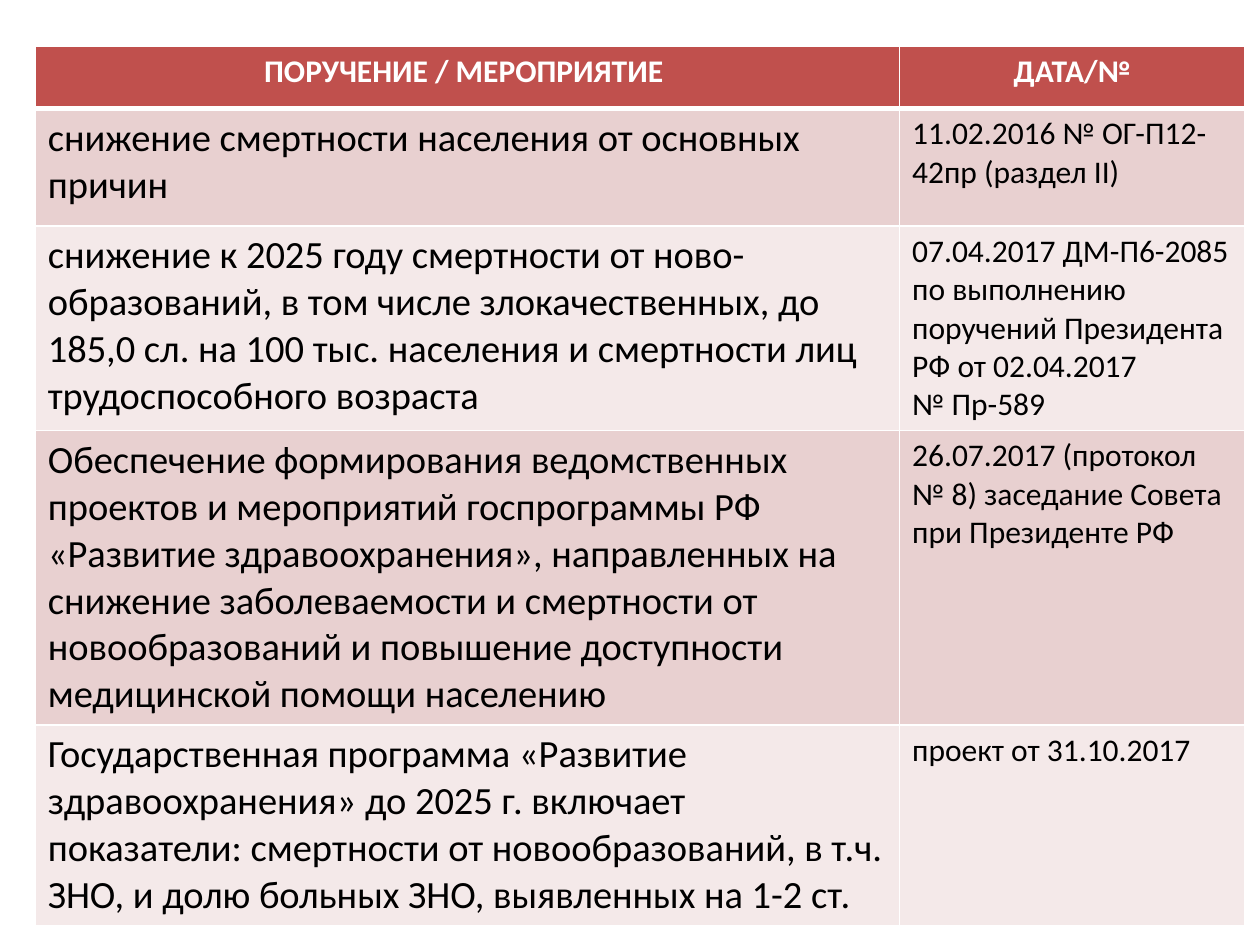
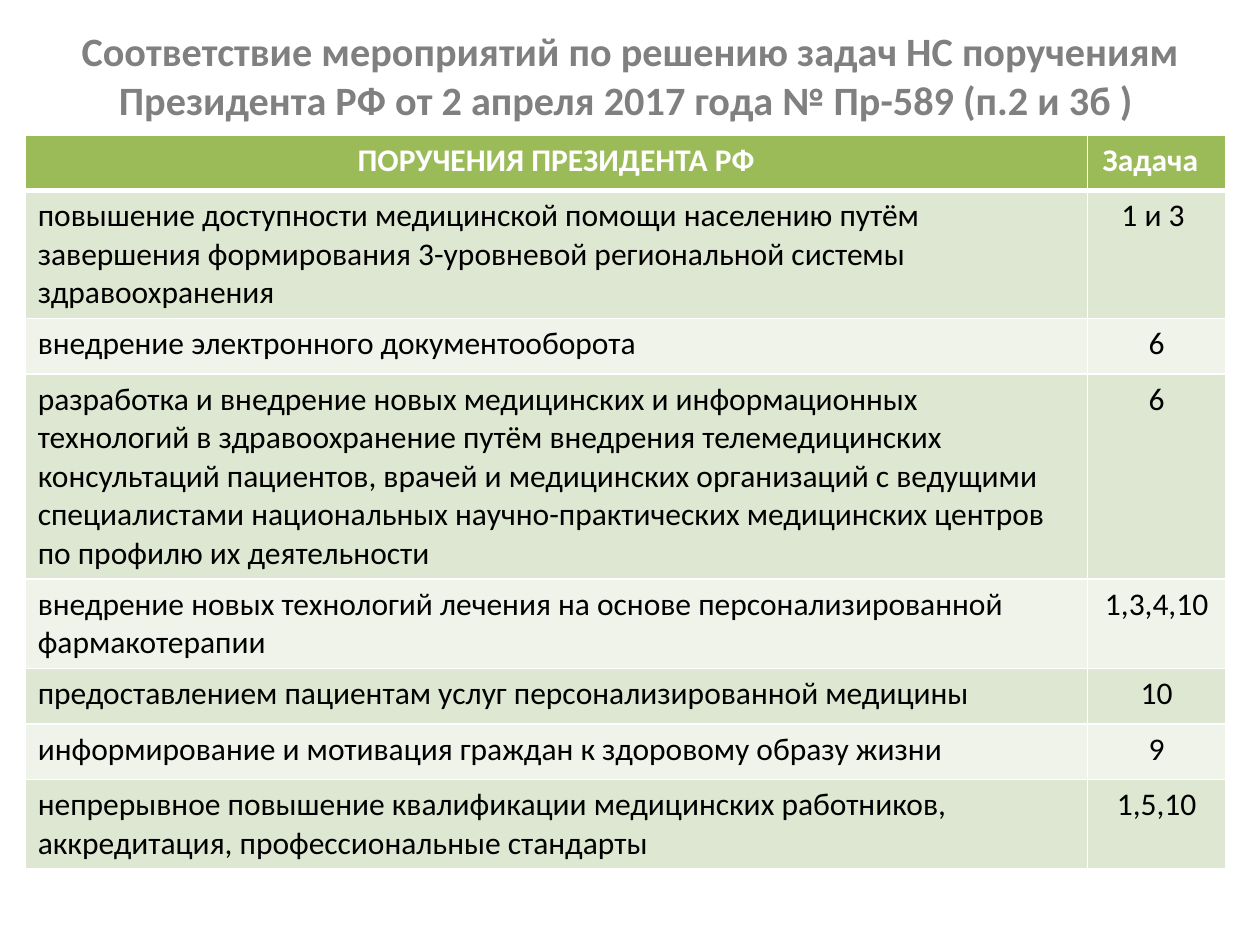
from dataclasses import dataclass

from lxml.etree import SubElement
from pptx import Presentation
from pptx.dml.color import RGBColor as Color
from pptx.enum.text import MSO_ANCHOR as Anchor, MSO_AUTO_SIZE as AutoSize, PP_ALIGN as Align
from pptx.oxml.ns import qn
from pptx.util import Emu, Inches, Pt

WIDTH, HEIGHT = Inches(10), Inches(7.5)
TITLE_ONLY, BLANK = 5, 6


@dataclass(frozen=True)
class Theme:
    font: str = "Calibri"
    white: str = "FFFFFF"
    black: str = "000000"
    grey: str = "808080"
    red: tuple = ("C0504D", "E8D0D0", "F4E9E9")
    green: tuple = ("9BBB59", "DEE7D1", "EFF3EA")
    title: int = 23
    large: int = 22
    normal: int = 18
    line: float = 1.22
    thin: int = 1
    thick: int = 3


@dataclass(frozen=True)
class Column:
    heading: str
    share: float
    size: int
    align: Align = Align.LEFT
    heading_margin: float = 0.1


THEME = Theme()

ORDER_COLUMNS = (
    Column("ПОРУЧЕНИЕ / МЕРОПРИЯТИЕ ", 68.6, THEME.large),
    Column("ДАТА/№", 27.4, THEME.normal),
)
ORDERS = [
    (2, "снижение смертности населения от основных причин",
     "11.02.2016 № ОГ-П12-42пр (раздел II)"),
    (4, "снижение к 2025 году смертности от ново-образований, в том числе "
        "злокачественных, до 185,0 сл. на 100 тыс. населения и смертности лиц "
        "трудоспособного возраста",
     "07.04.2017 ДМ-П6-2085 по выполнению поручений Президента РФ от 02.04.2017\n"
     "№ Пр-589"),
    (6, "Обеспечение формирования ведомственных проектов и мероприятий госпрограммы РФ "
        "«Развитие здравоохранения», направленных на снижение заболеваемости и смертности "
        "от новообразований и повышение доступности медицинской помощи населению",
     "26.07.2017 (протокол № 8) заседание Совета при Президенте РФ"),
    (4, "Государственная программа «Развитие здравоохранения» до 2025 г. включает "
        "показатели: смертности от новообразований, в т.ч. ЗНО, и долю больных ЗНО, "
        "выявленных на 1-2 ст.",
     "проект от 31.10.2017"),
]

TASK_TITLE = ("Соответствие мероприятий по решению задач НС поручениям Президента РФ "
              "от 2 апреля 2017 года № Пр-589 (п.2 и 3б ) ")
TASK_COLUMNS = (
    Column("ПОРУЧЕНИЯ ПРЕЗИДЕНТА РФ", 84.3, THEME.normal),
    Column("Задача", 11, THEME.normal, Align.CENTER, 0.2),
)
TASKS = [
    (3, "повышение доступности медицинской помощи населению путём завершения "
        "формирования 3-уровневой региональной системы здравоохранения", "1 и 3 "),
    (1, "внедрение электронного документооборота", "6"),
    (5, "разработка и внедрение новых медицинских и информационных технологий "
        "в здравоохранение путём внедрения телемедицинских консультаций пациентов, "
        "врачей и медицинских организаций с ведущими специалистами национальных "
        "научно-практических медицинских центров по профилю их деятельности", "6"),
    (2, "внедрение новых технологий лечения на основе персонализированной "
        "фармакотерапии", "1,3,4,10"),
    (1, "предоставлением пациентам услуг персонализированной медицины", "10"),
    (1, "информирование и мотивация граждан к здоровому образу жизни", "9"),
    (2, "непрерывное повышение квалификации медицинских работников, аккредитация, "
        "профессиональные стандарты", "1,5,10"),
]


def across(percent):
    return Emu(round(WIDTH * percent / 100))


def down(percent):
    return Emu(round(HEIGHT * percent / 100))


def add_text(frame, text, size, color, align, bold=False):
    for index, line in enumerate(text.split("\n")):
        para = frame.add_paragraph() if index else frame.paragraphs[0]
        para.alignment = align
        span = para.add_run()
        span.text = line
        span.font.name = THEME.font
        span.font.size = Pt(size)
        span.font.bold = bold
        span.font.color.rgb = Color.from_string(color)


def draw_borders(cell, bottom):
    properties = cell._tc.get_or_add_tcPr()
    widths = {"lnL": THEME.thin, "lnR": THEME.thin, "lnT": THEME.thin, "lnB": bottom}
    for side, width in widths.items():
        border = SubElement(properties, qn(f"a:{side}"), w=str(Pt(width)))
        fill = SubElement(border, qn("a:solidFill"))
        SubElement(fill, qn("a:srgbClr"), val=THEME.white)


def fill_cell(cell, text, size, color, align, background, heading=False):
    draw_borders(cell, THEME.thick if heading else THEME.thin)
    cell.fill.solid()
    cell.fill.fore_color.rgb = Color.from_string(background)
    add_text(cell.text_frame, text, size, color, align, heading)


def row_height(lines, size, minimum):
    return max(down(minimum), Pt(lines * size * THEME.line) + Inches(0.1))


def add_banded_table(page, left, top, columns, rows, palette, heading_row, minimum_row):
    header, *bands = palette
    heights = [down(heading_row)]
    heights += [row_height(lines, columns[0].size, minimum_row) for lines, *_ in rows]
    widths = [across(column.share) for column in columns]
    table = page.shapes.add_table(len(heights), len(columns), across(left), down(top),
                                  sum(widths), sum(heights)).table
    table.horz_banding = False
    for row, height in zip(table.rows, heights):
        row.height = height
    for number, column in enumerate(columns):
        table.columns[number].width = widths[number]
        heading = table.cell(0, number)
        heading.margin_right = Inches(column.heading_margin)
        fill_cell(heading, column.heading, THEME.normal, THEME.white, Align.CENTER,
                  header, heading=True)
        for index, (_, *texts) in enumerate(rows):
            fill_cell(table.cell(index + 1, number), texts[number], column.size,
                      THEME.black, column.align, bands[index % 2])


def add_title(page, text):
    title = page.shapes.title
    title.left, title.top = across(5.1), down(1.73)
    title.width, title.height = across(90), down(12.4)
    frame = title.text_frame
    frame.word_wrap = True
    frame.auto_size = AutoSize.NONE
    frame.vertical_anchor = Anchor.MIDDLE
    add_text(frame, text, THEME.title, THEME.grey, Align.CENTER, bold=True)


def add_page(deck, layout):
    return deck.slides.add_slide(deck.slide_layouts[layout])


def main():
    deck = Presentation()
    deck.slide_width, deck.slide_height = WIDTH, HEIGHT

    orders_page = add_page(deck, BLANK)
    add_banded_table(orders_page, 2.8, 4.9, ORDER_COLUMNS, ORDERS, THEME.red, 6.6, 12.4)

    tasks_page = add_page(deck, TITLE_ONLY)
    add_title(tasks_page, TASK_TITLE)
    add_banded_table(tasks_page, 2, 14.3, TASK_COLUMNS, TASKS, THEME.green, 5.87, 5.87)

    deck.save("out.pptx")


if __name__ == "__main__":
    main()
